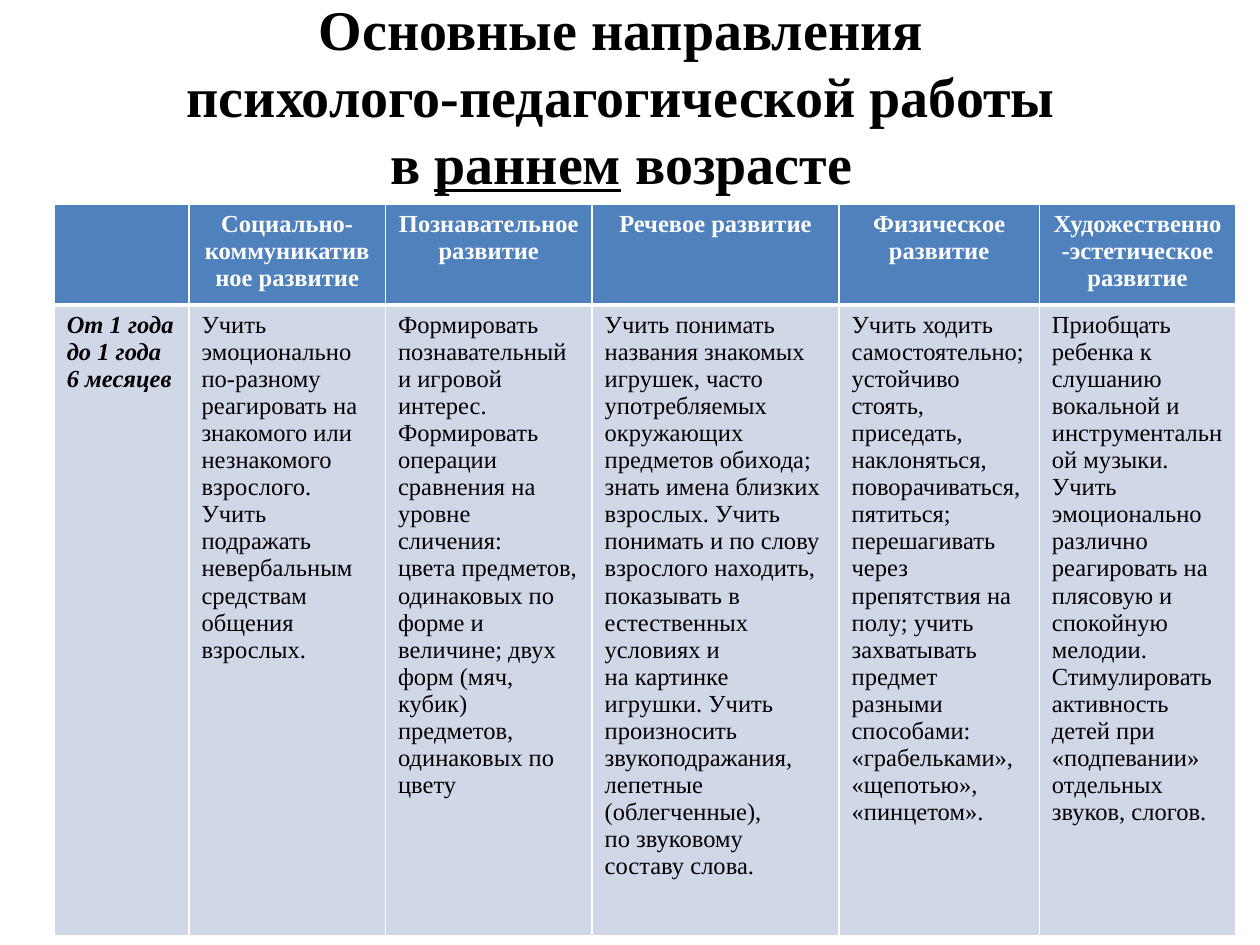
from dataclasses import dataclass

from lxml import etree
from pptx import Presentation
from pptx.dml.color import RGBColor
from pptx.enum.text import MSO_ANCHOR, PP_ALIGN
from pptx.oxml.ns import qn
from pptx.util import Inches, Pt

CENTER, LEFT = PP_ALIGN.CENTER, PP_ALIGN.LEFT
MIDDLE = MSO_ANCHOR.MIDDLE


@dataclass(frozen=True)
class Theme:
    font: str = "Times New Roman"
    title_size: int = 32
    table_size: int = 14
    ink: str = "000000"
    white: str = "FFFFFF"
    header_fill: str = "4F81BD"
    body_fill: str = "D0D8E8"
    thin: int = 1
    thick: int = 3


@dataclass(frozen=True)
class Column:
    width: float
    heading: str
    body: tuple[str, ...]


@dataclass(frozen=True)
class CellStyle:
    fill: str
    color: str
    align: PP_ALIGN
    top: int
    bottom: int
    bold: bool = False
    italic: bool = False


THEME = Theme()
HEADER = CellStyle(THEME.header_fill, THEME.white, CENTER, THEME.thin, THEME.thick, bold=True)
BODY = CellStyle(THEME.body_fill, THEME.ink, LEFT, THEME.thick, THEME.thin)
AGE = CellStyle(THEME.body_fill, THEME.ink, LEFT, THEME.thick, THEME.thin, bold=True, italic=True)

TITLE_LINES = (
    ("Основные направления",),
    ("психолого-педагогической работы",),
    ("в ", "раннем", " возрасте"),
)
UNDERLINED = "раннем"

COLUMNS = (
    Column(1.07, "", ("От 1 года до 1 года 6 месяцев",)),
    Column(1.56, "Социально-коммуникативное развитие", (
        "Учить эмоционально по-разному реагировать на знакомого или незнакомого взрослого.",
        "Учить подражать невербальным средствам общения",
        "взрослых.",
    )),
    Column(1.64, "Познавательное развитие", (
        "Формировать познавательный и игровой интерес.",
        "Формировать операции сравнения на уровне сличения:",
        "цвета предметов, одинаковых по форме и величине; двух",
        "форм (мяч, кубик) предметов, одинаковых по цвету",
    )),
    Column(1.96, "Речевое развитие", (
        "Учить понимать названия знакомых игрушек, часто употребляемых окружающих "
        "предметов обихода; знать имена близких взрослых. Учить понимать и по слову "
        "взрослого находить, показывать в естественных условиях и",
        "на картинке игрушки. Учить произносить звукоподражания, лепетные (облегченные),",
        "по звуковому составу слова.",
    )),
    Column(1.59, "Физическое развитие", (
        "Учить ходить самостоятельно; устойчиво стоять, приседать, наклоняться, "
        "поворачиваться, пятиться; перешагивать через препятствия на полу; учить "
        "захватывать предмет разными способами: «грабельками», «щепотью», «пинцетом».",
    )),
    Column(1.56, "Художественно-эстетическое развитие", (
        "Приобщать ребенка к слушанию вокальной и инструментальной музыки. Учить "
        "эмоционально различно реагировать на плясовую и спокойную мелодии. "
        "Стимулировать активность детей при «подпевании» отдельных",
        "звуков, слогов.",
    )),
)
ROW_HEIGHT = 0.41  # minimum; rows grow with their text


def format_font(font, size: int, color: str, bold: bool, italic: bool = False) -> None:
    font.name, font.size = THEME.font, Pt(size)
    font.bold, font.italic = bold, italic
    font.color.rgb = RGBColor.from_string(color)


def add_title(slide) -> None:
    s = slide.shapes.add_textbox(Inches(0.43), Inches(0.13), Inches(9), Inches(1.25))
    tf = s.text_frame
    tf.word_wrap = True
    tf.vertical_anchor = MIDDLE
    p = tf.paragraphs[0]
    p.alignment = CENTER
    for i, line in enumerate(TITLE_LINES):
        if i:
            p.add_line_break()
        for text in line:
            r = p.add_run()
            r.text = text
            format_font(r.font, THEME.title_size, THEME.ink, bold=True)
            r.font.underline = text == UNDERLINED


def set_borders(cell, top: int, bottom: int) -> None:
    tc_pr = cell._tc.get_or_add_tcPr()
    widths = {"a:lnL": THEME.thin, "a:lnR": THEME.thin, "a:lnT": top, "a:lnB": bottom}
    for i, (tag, width) in enumerate(widths.items()):
        ln = etree.Element(qn(tag), w=str(Pt(width)))
        fill = etree.SubElement(ln, qn("a:solidFill"))
        etree.SubElement(fill, qn("a:srgbClr"), val=THEME.white)
        tc_pr.insert(i, ln)


def fill_cell(cell, text: str, style: CellStyle) -> None:
    cell.fill.solid()
    cell.fill.fore_color.rgb = RGBColor.from_string(style.fill)
    set_borders(cell, style.top, style.bottom)
    cell.text_frame.text = text
    for p in cell.text_frame.paragraphs:
        p.alignment = style.align
        for r in p.runs:
            format_font(r.font, THEME.table_size, style.color, style.bold, style.italic)


def add_directions_table(slide) -> None:
    width = sum(column.width for column in COLUMNS)
    s = slide.shapes.add_table(2, len(COLUMNS), Inches(0.43), Inches(1.62),
                               Inches(width), Inches(2 * ROW_HEIGHT))
    table = s.table
    table.horz_banding = False
    for i, column in enumerate(COLUMNS):
        table.columns[i].width = Inches(column.width)
        fill_cell(table.cell(0, i), column.heading, HEADER)
        fill_cell(table.cell(1, i), "\n".join(column.body), BODY if i else AGE)


def main() -> None:
    prs = Presentation()
    prs.slide_width, prs.slide_height = Inches(10), Inches(7.5)
    slide = prs.slides.add_slide(prs.slide_layouts[6])
    add_title(slide)
    add_directions_table(slide)
    prs.save("out.pptx")


if __name__ == "__main__":
    main()
